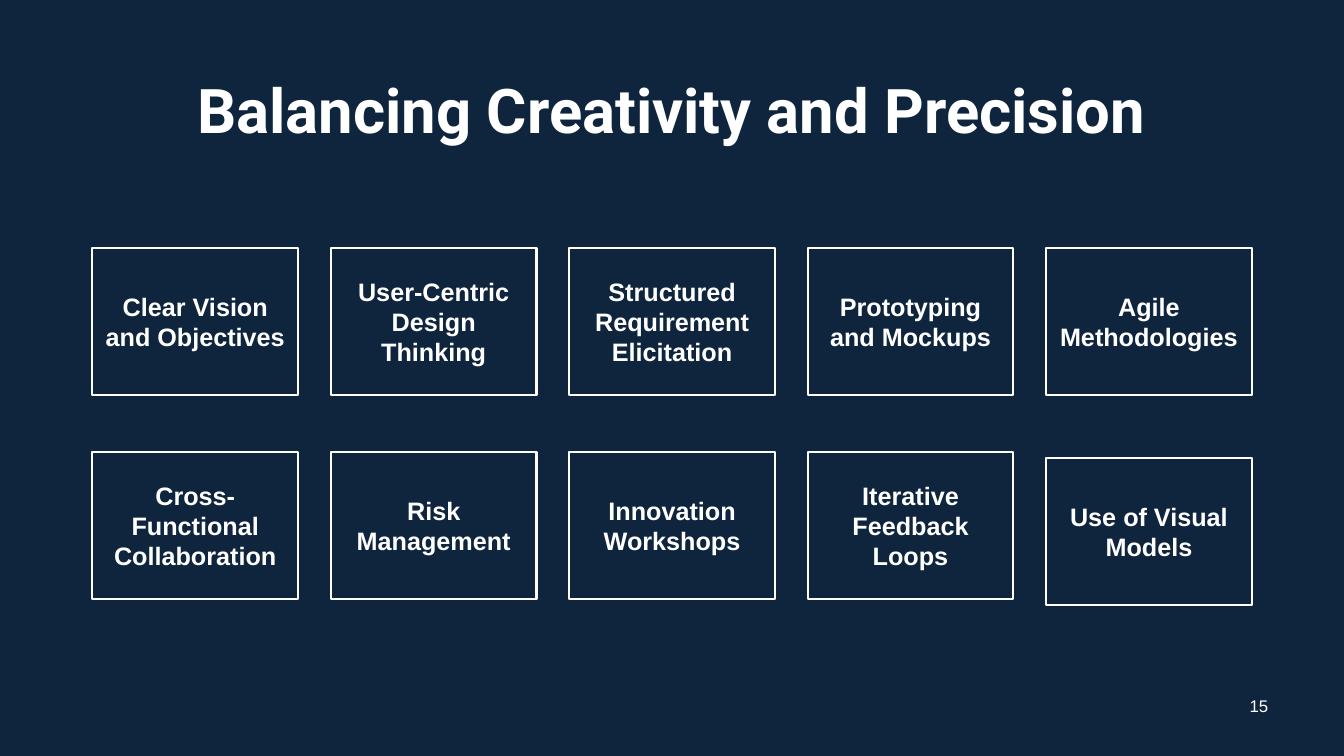
from pptx import Presentation
from pptx import util as u
from pptx.dml import color
from pptx.enum import shapes, text

COLORS = {"navy": "0F253E", "white": "FFFFFF"}

PRACTICES = [
    ["Clear Vision and Objectives", "User-Centric Design Thinking",
     "Structured Requirement Elicitation", "Prototyping and Mockups",
     "Agile Methodologies"],
    ["Cross-Functional Collaboration", "Risk Management",
     "Innovation Workshops", "Iterative Feedback Loops",
     "Use of Visual Models"],
]
ROW_TOPS = [177.1, 322.6]
LEFT, PITCH = 66, 170.3
BOX_WIDTH, BOX_HEIGHT = 147, 105.2
LAST_BOX_DROP = 4.3  # the final box sits slightly below its row


class Slide:
    """Holds the style and the current slide."""

    def __init__(self, deck):
        self.page = deck.slides.add_slide(deck.slide_layouts[6])
        fill = self.page.background.fill
        fill.solid()
        fill.fore_color.rgb = self.color("navy")

    def color(self, name):
        return color.RGBColor.from_string(COLORS[name])

    def set_words(self, box, words, size, font="Arial", bold=True, spacing=None):
        frame = box.text_frame
        frame.text = words
        frame.word_wrap = True
        frame.vertical_anchor = text.MSO_ANCHOR.MIDDLE
        para = frame.paragraphs[0]
        para.alignment = text.PP_ALIGN.CENTER
        para.line_spacing = spacing
        span = para.runs[0]
        span.font.name = font
        span.font.size = u.Pt(size)
        span.font.bold = bold
        span.font.color.rgb = self.color("white")

    def label(self, words, left, top, width, height, size, **style):
        box = self.page.shapes.add_textbox(
            u.Pt(left), u.Pt(top), u.Pt(width), u.Pt(height))
        self.set_words(box, words, size, **style)

    def outlined_box(self, words, left, top):
        box = self.page.shapes.add_shape(
            shapes.MSO_SHAPE.RECTANGLE,
            u.Pt(left), u.Pt(top), u.Pt(BOX_WIDTH), u.Pt(BOX_HEIGHT))
        box.shadow.inherit = False
        box.fill.background()
        box.line.color.rgb = self.color("white")
        box.line.width = u.Pt(1.5)
        self.set_words(box, words, 18)


def main():
    deck = Presentation()
    deck.slide_width, deck.slide_height = u.Pt(960), u.Pt(540)
    slide = Slide(deck)

    # Title
    slide.label("Balancing Creativity and Precision", LEFT, 28.8, 828, 104.4,
                44, font="Roboto", spacing=0.9)

    # Grid of practices
    for row, (top, names) in enumerate(zip(ROW_TOPS, PRACTICES)):
        for column, name in enumerate(names):
            is_last = row == 1 and column == 4
            drop = LAST_BOX_DROP if is_last else 0
            slide.outlined_box(name, LEFT + column * PITCH, top + drop)

    # Page number
    slide.label("15", 881.3, 489.6, 36, 28.8, 12, bold=False)

    deck.save("out.pptx")


if __name__ == "__main__":
    main()
